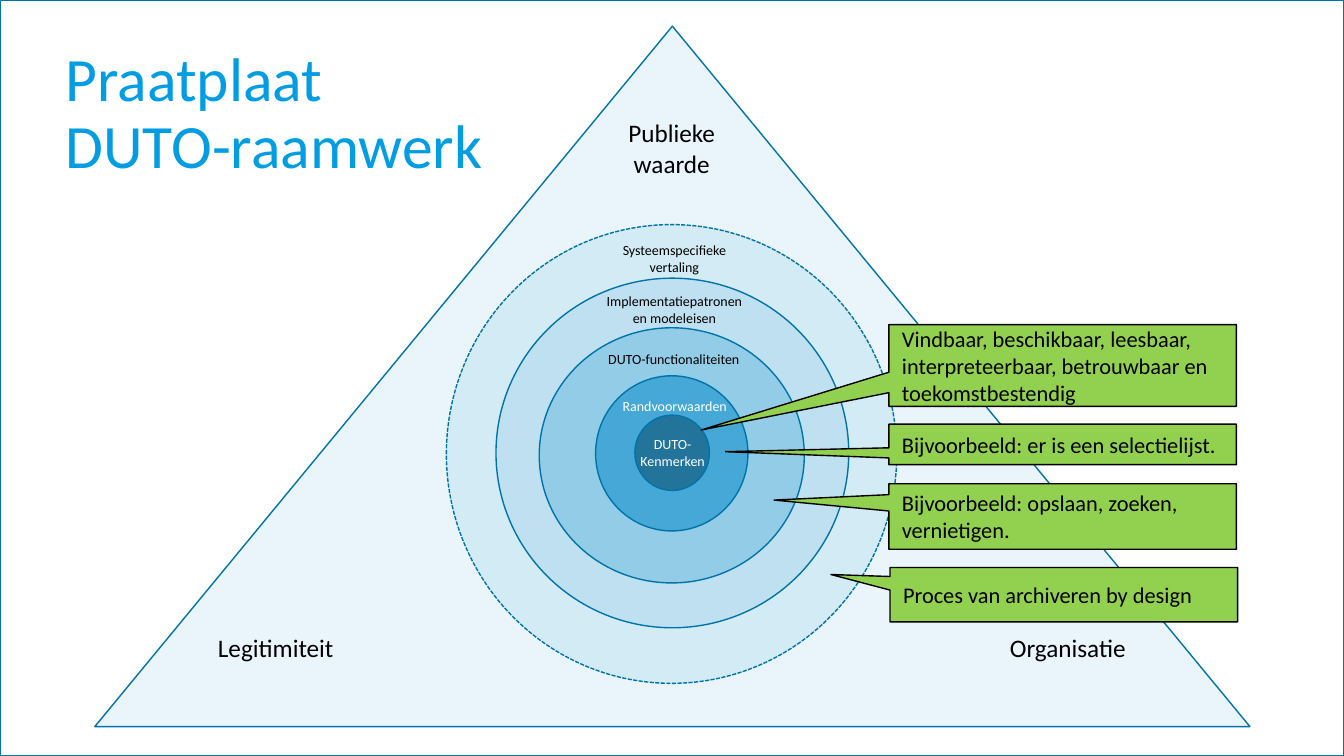
from pptx import Presentation
from pptx.dml.color import RGBColor
from pptx.enum.dml import MSO_LINE as Dash
from pptx.enum.shapes import MSO_SHAPE as Kind
from pptx.enum.text import MSO_ANCHOR as Anchor, MSO_AUTO_SIZE as Fit, PP_ALIGN as Align
from pptx.util import Cm, Pt

BLUE, BLACK, WHITE = "0074A8", "000000", "FFFFFF"


def draw(kind, box, fill, line):
    shape = slide.shapes.add_shape(kind, *map(Cm, box))
    shape.shadow.inherit = False
    shape.fill.solid()
    shape.fill.fore_color.rgb = RGBColor.from_string(fill)
    shape.line.color.rgb = RGBColor.from_string(line)
    shape.line.width = Pt(1)
    return shape


def write(shape, text, size, color, align, **form):
    frame = shape.text_frame
    frame.text = text
    form = {"word_wrap": True, "auto_size": Fit.NONE, **form}
    for key, value in form.items():
        setattr(frame, key, value)
    para = frame.paragraphs[0]
    para.alignment = align
    font = para.runs[0].font
    for run in para.runs:
        font = run.font
        font.name, font.size = "Calibri", Pt(size)
        font.color.rgb = RGBColor.from_string(color)
    return para


deck = Presentation()
deck.slide_width, deck.slide_height = Cm(33.87), Cm(19.05)
slide = deck.slides.add_slide(deck.slide_layouts[5])

# Page frame and triangle
draw(Kind.RECTANGLE, (0, 0, 33.87, 19.05), WHITE, BLUE)
draw(Kind.ISOSCELES_TRIANGLE, (2.39, 0.66, 29.11, 17.65), "E9F5FA", BLUE)

# Rings, from the outside in
rings = [
    (11.25, 5.66, 11.35, 11.56, "D3EBF5"),
    (12.5, 7.01, 8.89, 8.81, "BEE0F1"),
    (13.59, 8.26, 6.68, 6.43, "92CCE7"),
    (15.01, 9.47, 3.84, 3.91, "45A8D6"),
    (16, 10.46, 1.88, 1.9, "22749A"),
]
for i, (*box, fill) in enumerate(rings):
    ring = draw(Kind.FLOWCHART_CONNECTOR, box, fill, BLUE)
    if i == 0:
        ring.line.dash_style = Dash.SQUARE_DOT

# Labels of corners and rings
labels = [
    ("Publieke waarde", 15.01, 2.84, 3.84, 1.8, 18, BLACK),
    ("Legitimiteit", 5.03, 15.82, 3.84, 1.02, 18, BLACK),
    ("Organisatie", 24.99, 15.82, 3.84, 1.02, 18, BLACK),
    ("Systeemspecifieke vertaling", 14.91, 5.97, 4.17, 1.12, 10, BLACK),
    ("Implementatiepatronen en modeleisen", 14.91, 7.24, 4.17, 1.12, 10, BLACK),
    ("DUTO-functionaliteiten", 15.06, 8.71, 3.84, 0.69, 10, BLACK),
    ("Randvoorwaarden", 15.24, 9.88, 3.53, 0.69, 10, WHITE),
    ("DUTO-Kenmerken", 15.72, 10.85, 2.46, 1.12, 10, WHITE),
]
for text, *box, size, color in labels:
    label = slide.shapes.add_textbox(*map(Cm, box))
    write(label, text, size, color, Align.CENTER, auto_size=Fit.SHAPE_TO_FIT_TEXT)

# Callouts: left, top, height and pointer tip
notes = [
    ("Vindbaar, beschikbaar, leesbaar, interpreteerbaar, betrouwbaar en toekomstbestendig",
     22.4, 8.18, 2.06, -1.04, 0.79),
    ("Bijvoorbeeld: er is een selectielijst.", 22.4, 10.69, 1.02, -0.97, 0.18),
    ("Bijvoorbeeld: opslaan, zoeken, vernietigen.", 22.4, 12.19, 1.65, -0.83, -0.25),
    ("Proces van archiveren by design", 22.43, 14.3, 1.37, -0.67, -0.37),
]
inset = {"margin_left": Cm(0.33), "margin_right": Cm(0.33),
         "margin_top": Cm(0.18), "margin_bottom": Cm(0.18)}
for text, left, top, high, *tip in notes:
    note = draw(Kind.RECTANGULAR_CALLOUT, (left, top, 8.76, high), "92D050", BLACK)
    note.adjustments[0], note.adjustments[1] = tip
    write(note, text, 16, BLACK, Align.LEFT, vertical_anchor=Anchor.MIDDLE, **inset)

# Title, brought to the front
title = slide.shapes.title
title.left, title.top, title.width, title.height = map(Cm, (1.4, 1.3, 29.21, 3.2))
head = write(title, "Praatplaat\vDUTO-raamwerk", 44, "009DE3", Align.LEFT,
             vertical_anchor=Anchor.MIDDLE)
head.line_spacing = 0.9
slide.shapes._spTree.append(title._element)

deck.save("out.pptx")
